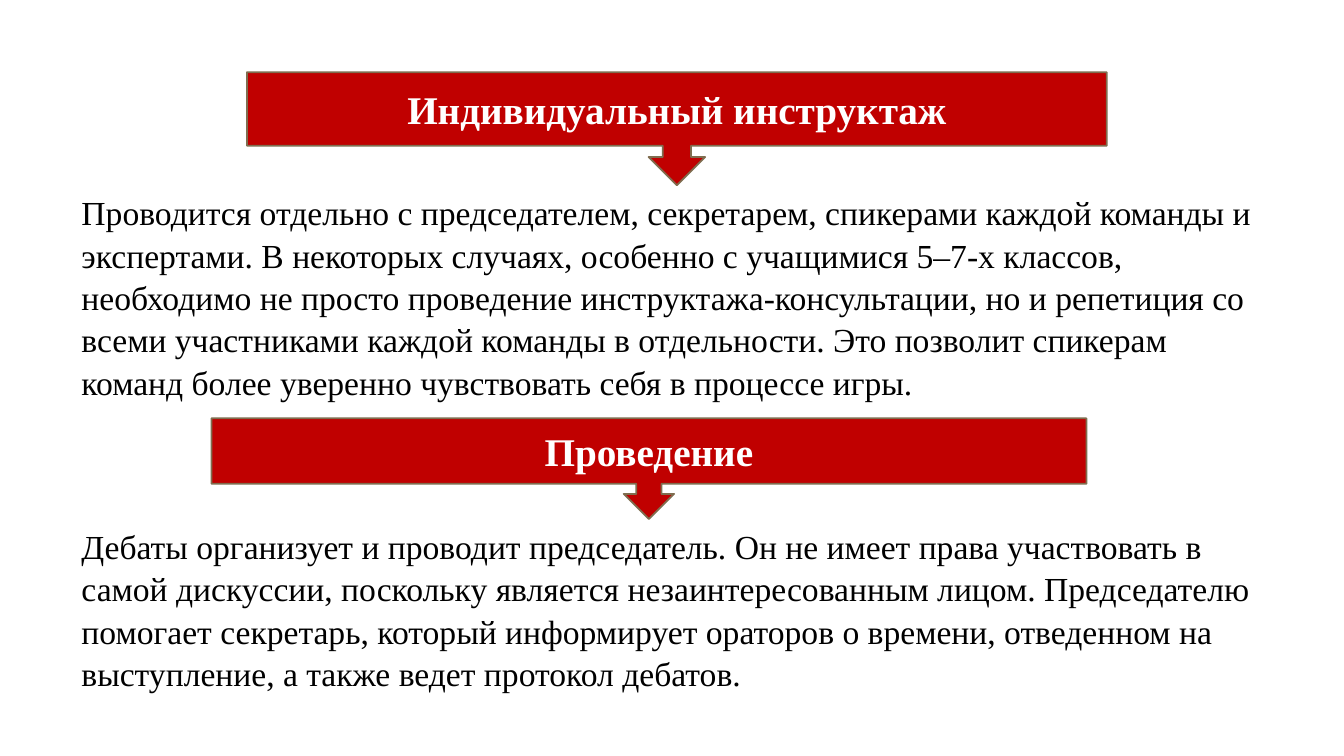
from pptx import Presentation
from pptx.dml.color import RGBColor
from pptx.enum.shapes import MSO_SHAPE
from pptx.enum.text import MSO_ANCHOR, PP_ALIGN
from pptx.util import Pt

CALLOUT = MSO_SHAPE.DOWN_ARROW_CALLOUT
MIDDLE, TOP = MSO_ANCHOR.MIDDLE, MSO_ANCHOR.TOP
CENTER, LEFT = PP_ALIGN.CENTER, PP_ALIGN.LEFT
RED, BROWN, WHITE, BLACK = "C00000", "7F6D4F", "FFFFFF", "000000"
HEADING = {"name": "Times New Roman", "size": Pt(28), "bold": True}
BODY = {"name": "Times New Roman", "size": Pt(24), "bold": False}
BODY_LEFT, BODY_WIDTH = 51.1, 864.7

# Each stage: heading, callout box, body height, body text
STAGES = [
    ("Индивидуальный инструктаж", (176.4, 51.6, 614.2, 80.8), 152.6,
     "Проводится отдельно с председателем, секретарем, спикерами каждой "
     "команды и экспертами. В некоторых случаях, особенно с учащимися "
     "5–7-х классов, необходимо не просто проведение "
     "инструктажа-консультации, но и репетиция со всеми участниками каждой "
     "команды в отдельности. Это позволит спикерам команд более уверенно "
     "чувствовать себя в процессе игры."),
    ("Проведение", (151, 298.8, 625, 72), 123.8,
     "Дебаты организует и проводит председатель. Он не имеет права "
     "участвовать в самой дискуссии, поскольку является незаинтересованным "
     "лицом. Председателю помогает секретарь, который информирует ораторов "
     "о времени, отведенном на выступление, а также ведет протокол дебатов."),
]


def color(value):
    return RGBColor.from_string(value)


def write(sp, text, fmt, text_color, align, anchor, spacing):
    tf = sp.text_frame
    tf.word_wrap = True
    tf.vertical_anchor = anchor
    p = tf.paragraphs[0]
    p.alignment = align
    p.line_spacing = spacing
    r = p.add_run()
    r.text = text
    for key, value in fmt.items():
        setattr(r.font, key, value)
    r.font.color.rgb = color(text_color)


def add_stage(s, heading, box, body_height, body):
    # Heading callout with its arrow
    left, top, width, height = box
    sp = s.shapes.add_shape(CALLOUT, Pt(left), Pt(top), Pt(width), Pt(height))
    sp.shadow.inherit = False
    sp.fill.solid()
    sp.fill.fore_color.rgb = color(RED)
    sp.line.color.rgb = color(BROWN)
    sp.line.width = Pt(1.25)
    write(sp, heading, HEADING, WHITE, CENTER, MIDDLE, 1.0)

    # Body text directly under the arrow
    sp = s.shapes.add_textbox(Pt(BODY_LEFT), Pt(top + height),
                              Pt(BODY_WIDTH), Pt(body_height))
    write(sp, body, BODY, BLACK, LEFT, TOP, 1.05)


def main():
    prs = Presentation()
    prs.slide_width, prs.slide_height = Pt(960), Pt(540)
    s = prs.slides.add_slide(prs.slide_layouts[6])
    for stage in STAGES:
        add_stage(s, *stage)
    prs.save("out.pptx")


if __name__ == "__main__":
    main()
